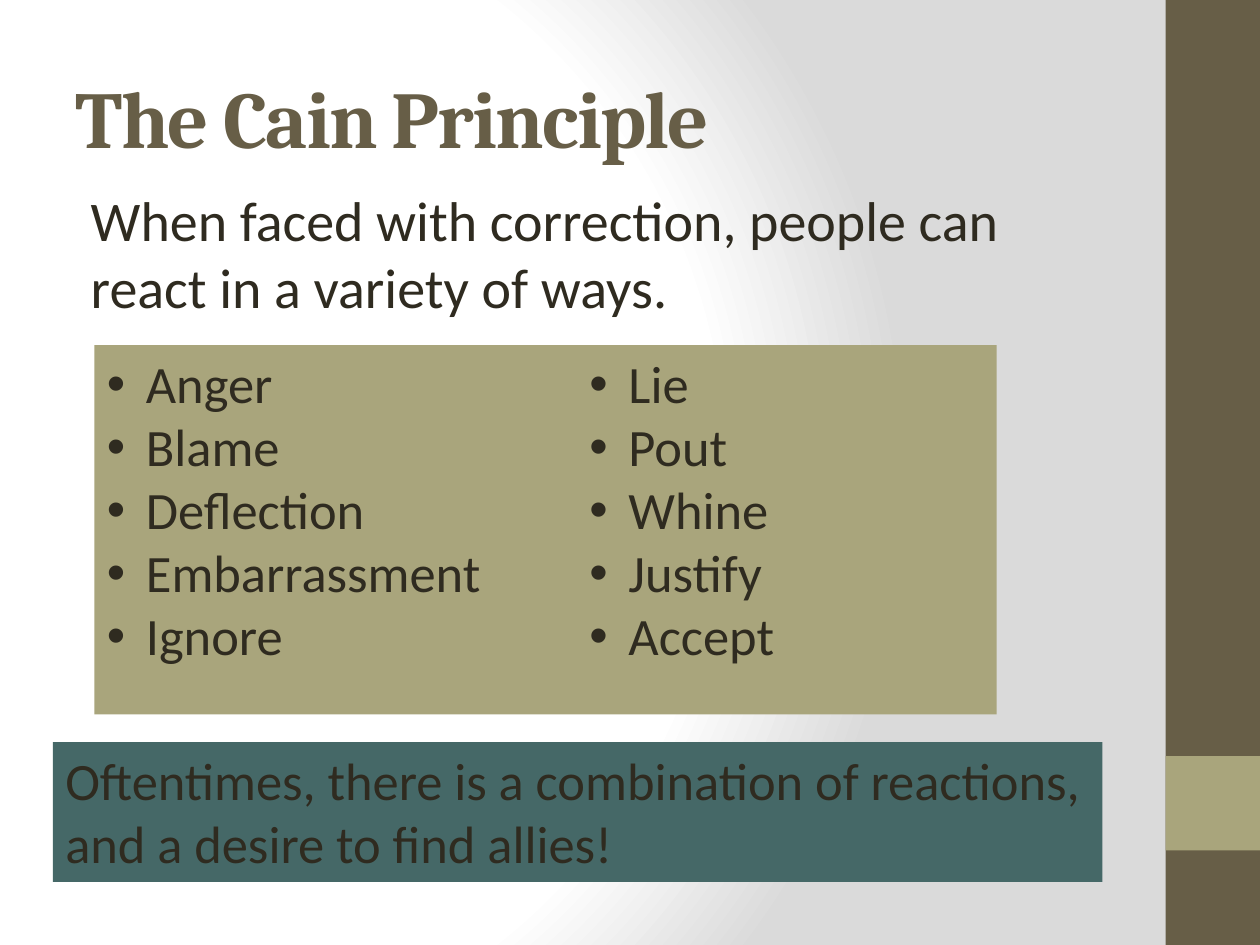
from dataclasses import dataclass

import pptx
import pptx.dml.color
import pptx.enum.shapes
import pptx.enum.text
import pptx.oxml
import pptx.oxml.ns
import pptx.util
from pptx.util import Inches


@dataclass(frozen=True)
class Theme:
    brown: str = "675E47"
    olive: str = "A9A57C"
    teal: str = "456867"
    ink: str = "2F2B20"
    white: str = "FFFFFF"
    grey: str = "DADADA"
    heading_font: str = "Cambria"
    body_font: str = "Calibri"
    title_size: int = 46
    body_size: int = 32
    box_size: int = 30


@dataclass(frozen=True)
class Box:
    left: float
    top: float
    width: float
    height: float
    fill: str
    lines: tuple[str, ...] = ()
    bulleted: bool = False


THEME = Theme()
LIST_TOP, LIST_HEIGHT = 2.74, 2.93
BOXES = (
    Box(9.25, 0, 0.75, 7.5, THEME.brown),
    Box(9.25, 6, 0.75, 0.75, THEME.olive),
    Box(0.75, LIST_TOP, 3.83, LIST_HEIGHT, THEME.olive,
        ("Anger", "Blame", "Deflection", "Embarrassment", "Ignore"), True),
    Box(4.58, LIST_TOP, 3.33, LIST_HEIGHT, THEME.olive,
        ("Lie", "Pout", "Whine", "Justify", "Accept"), True),
    Box(0.42, 5.89, 8.33, 1.11, THEME.teal,
        ("Oftentimes, there is a combination of reactions, "
         "and a desire to find allies!",)),
)


def rgb(value: str) -> pptx.dml.color.RGBColor:
    return pptx.dml.color.RGBColor.from_string(value)


def add_run(p, text: str, size: int, color: str = THEME.ink,
            font: str = THEME.body_font):
    p.alignment = pptx.enum.text.PP_ALIGN.LEFT
    r = p.add_run()
    r.text = text
    r.font.name = font
    r.font.size = pptx.util.Pt(size)
    r.font.color.rgb = rgb(color)
    return r


def set_bullet(p, left: float, indent: float, char: str = "") -> None:
    pPr = p._p.get_or_add_pPr()
    pPr.set("marL", str(Inches(left)))
    pPr.set("indent", str(Inches(indent)))
    bullet = f'a:buChar char="{char}"' if char else "a:buNone"
    if char:
        pPr.append(pptx.oxml.parse_xml(
            f'<a:buFont {pptx.oxml.ns.nsdecls("a")} typeface="Arial"/>'))
    tag, _, attrs = bullet.partition(" ")
    pPr.append(pptx.oxml.parse_xml(
        f'<{tag} {pptx.oxml.ns.nsdecls("a")} {attrs}/>'))


def set_background(s) -> None:
    stops = ((0, THEME.white), (75, THEME.white), (100, THEME.grey))
    gs = "".join(f'<a:gs pos="{pos * 1000}"><a:srgbClr val="{color}"/></a:gs>'
                 for pos, color in stops)
    s._element.cSld.insert(0, pptx.oxml.parse_xml(
        f'<p:bg {pptx.oxml.ns.nsdecls("p", "a")}><p:bgPr>'
        f'<a:gradFill rotWithShape="1"><a:gsLst>{gs}</a:gsLst>'
        '<a:path path="circle"><a:fillToRect l="20000" t="50000" '
        'r="100000" b="50000"/></a:path></a:gradFill>'
        '<a:effectLst/></p:bgPr></p:bg>'))


def add_box(s, box: Box) -> None:
    sp = s.shapes.add_shape(
        pptx.enum.shapes.MSO_SHAPE.RECTANGLE, Inches(box.left),
        Inches(box.top), Inches(box.width), Inches(box.height))
    sp.shadow.inherit = False
    sp.fill.solid()
    sp.fill.fore_color.rgb = rgb(box.fill)
    sp.line.fill.background()
    tf = sp.text_frame
    tf.word_wrap = True
    tf.vertical_anchor = pptx.enum.text.MSO_ANCHOR.TOP
    for i, line in enumerate(box.lines):
        p = tf.add_paragraph() if i else tf.paragraphs[0]
        add_run(p, line, THEME.box_size)
        if box.bulleted:
            set_bullet(p, 0.31, -0.31, "•")


def place(sp, left: float, top: float, width: float, height: float):
    sp.left, sp.top = Inches(left), Inches(top)
    sp.width, sp.height = Inches(width), Inches(height)
    tf = sp.text_frame
    tf.word_wrap = True
    tf.auto_size = pptx.enum.text.MSO_AUTO_SIZE.NONE
    return tf


def main() -> None:
    prs = pptx.Presentation()
    prs.slide_width, prs.slide_height = Inches(10), Inches(7.5)
    s = prs.slides.add_slide(prs.slide_layouts[1])
    set_background(s)

    tf = place(s.shapes.title, 0.5, 0.3, 8.33, 1.25)
    tf.vertical_anchor = pptx.enum.text.MSO_ANCHOR.MIDDLE
    r = add_run(tf.paragraphs[0], "The Cain Principle", THEME.title_size,
                THEME.brown, THEME.heading_font)
    r.font.bold = True
    r._r.get_or_add_rPr().set("spc", "-100")

    tf = place(s.placeholders[1], 0.5, 1.42, 8.33, 1.5)
    p = tf.paragraphs[0]
    add_run(p, "When faced with correction, people can react in a variety "
               "of ways.", THEME.body_size)
    set_bullet(p, 0.12, 0)

    for box in BOXES:
        add_box(s, box)
    prs.save("out.pptx")


if __name__ == "__main__":
    main()
